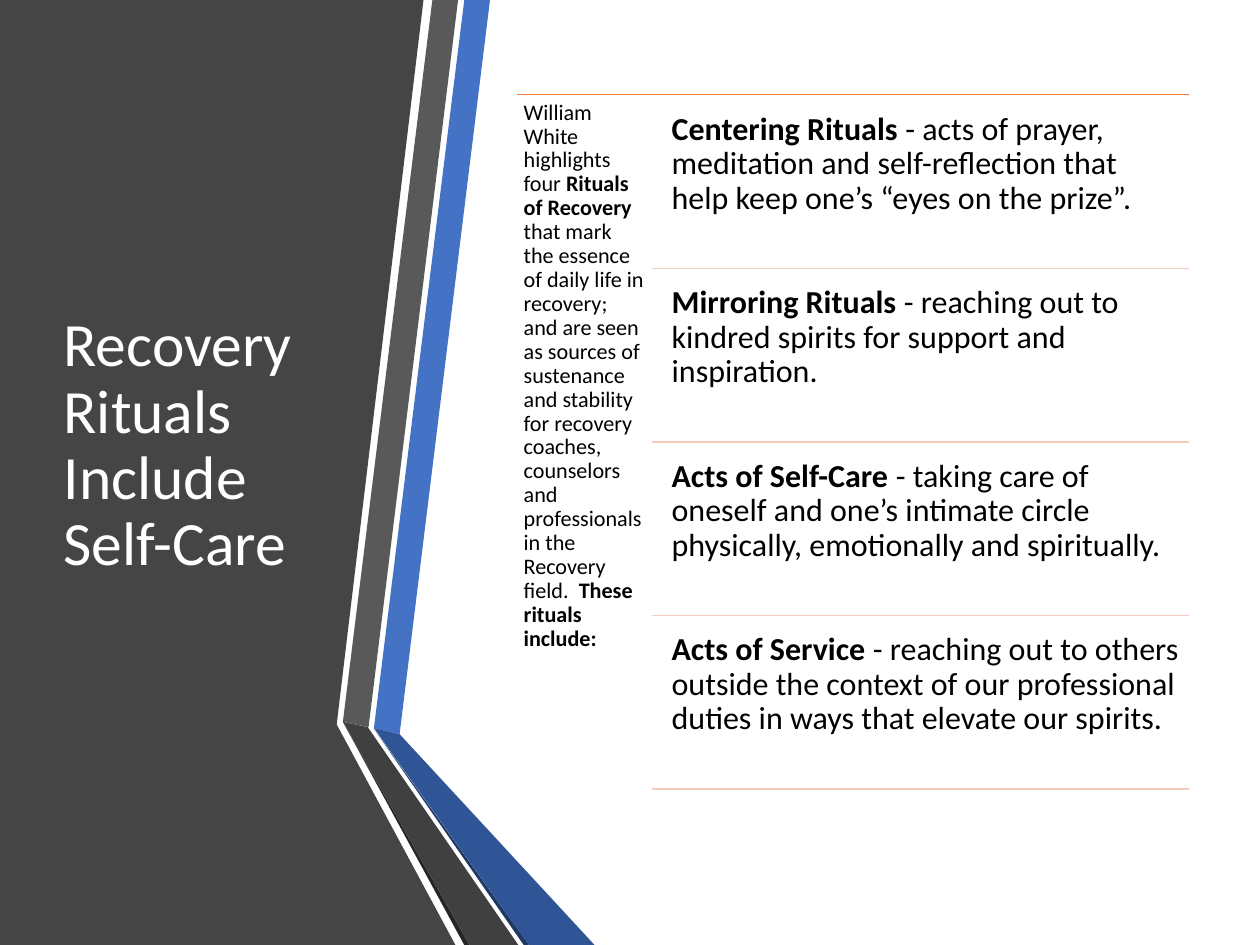
from lxml.etree import SubElement
from pptx import Presentation
from pptx.dml.color import RGBColor
from pptx.enum.shapes import MSO_CONNECTOR
from pptx.enum.text import MSO_ANCHOR
from pptx.oxml.ns import qn
from pptx.util import Inches, Pt


def color(hex_string):
    return RGBColor.from_string(hex_string)


def add_text(left, top, width, height, runs, size, ink, inset, anchor=MSO_ANCHOR.TOP):
    frame = slide.shapes.add_textbox(
        Inches(left), Inches(top), Inches(width), Inches(height)).text_frame
    frame.word_wrap = True
    frame.vertical_anchor = anchor
    frame.margin_left = frame.margin_right = Inches(inset)
    frame.margin_top = frame.margin_bottom = Inches(inset)
    paragraph = frame.paragraphs[0]
    paragraph.line_spacing = 0.9
    for text, bold in runs:
        run = paragraph.add_run()
        run.text = text
        run.font.name = "Calibri"
        run.font.size = Pt(size)
        run.font.bold = bold
        run.font.color.rgb = color(ink)


presentation = Presentation()
presentation.slide_width = Inches(14.22)
presentation.slide_height = Inches(10.67)
slide = presentation.slides.add_slide(presentation.slide_layouts[6])

# Dark panel and folded ribbons, from back to front
BOTTOM = 10.67
panel_and_ribbons = [
    ("454545", [(0, 0), (4.78, 0), (3.8, 8.18), (5.14, BOTTOM), (0, BOTTOM)]),
    ("4472C4", [(4.22, 8.22), (4.51, 8.29), (5.53, 0), (5.24, 0)]),
    ("595959", [(5.17, 0), (4.88, 0), (3.87, 8.15), (4.16, 8.21)]),
    ("262626", [(3.87, 8.15), (5.24, BOTTOM), (5.3, BOTTOM)]),
    ("203864", [(4.22, 8.23), (5.91, BOTTOM), (5.97, BOTTOM)]),
    ("2F5597", [(4.22, 8.22), (5.97, BOTTOM), (6.71, BOTTOM), (4.51, 8.29)]),
    ("404040", [(3.87, 8.15), (5.3, BOTTOM), (5.85, BOTTOM), (4.15, 8.21)]),
]
for fill, corners in panel_and_ribbons:
    points = [(Inches(x), Inches(y)) for x, y in corners]
    builder = slide.shapes.build_freeform(*points[0])
    builder.add_line_segments(points[1:], close=True)
    band = builder.convert_to_shape()
    band.shadow.inherit = False
    band.fill.solid()
    band.fill.fore_color.rgb = color(fill)
    band.line.fill.background()

# Title
add_text(0.62, 1.07, 3.24, 7.94, [("Recovery Rituals Include Self-Care", False)],
         50, "FFFFFF", 0.1, MSO_ANCHOR.MIDDLE)

# Introduction
introduction = [
    ("William White highlights four ", False),
    ("Rituals of Recovery", True),
    (" that mark the essence of daily life in recovery; and are seen as sources of "
     "sustenance and stability for recovery coaches, counselors and professionals "
     "in the Recovery field.  ", False),
    ("These rituals include:", True),
]
add_text(5.84, 1.07, 1.51, 7.94, introduction, 18, "000000", 0.07)

# The four rituals, each closed by a rule
rituals = [
    ("Centering Rituals", " - acts of prayer, meditation and self-reflection that help "
                          "keep one’s “eyes on the prize”."),
    ("Mirroring Rituals", " - reaching out to kindred spirits for support and inspiration."),
    ("Acts of Self-Care", " - taking care of oneself and one’s intimate circle physically, "
                          "emotionally and spiritually."),
    ("Acts of Service", " - reaching out to others outside the context of our professional "
                        "duties in ways that elevate our spirits."),
]
LIST_TOP, ROW_STEP = 1.07, 1.96
rules = [(5.84, LIST_TOP, "ED7D31")]
for row, (ritual, meaning) in enumerate(rituals):
    row_top = LIST_TOP + row * ROW_STEP
    add_text(7.47, row_top + 0.09, 5.95, 1.87, [(ritual, True), (meaning, False)],
             26, "000000", 0.11)
    rules.append((7.36, row_top + ROW_STEP, "F6CCBE"))

# Rules
for start, height, ink in rules:
    rule = slide.shapes.add_connector(
        MSO_CONNECTOR.STRAIGHT, Inches(start), Inches(height), Inches(13.42), Inches(height))
    rule.line.color.rgb = color(ink)
    rule.line.width = Pt(1)
    SubElement(rule._element.spPr, qn("a:effectLst"))

presentation.save("out.pptx")
